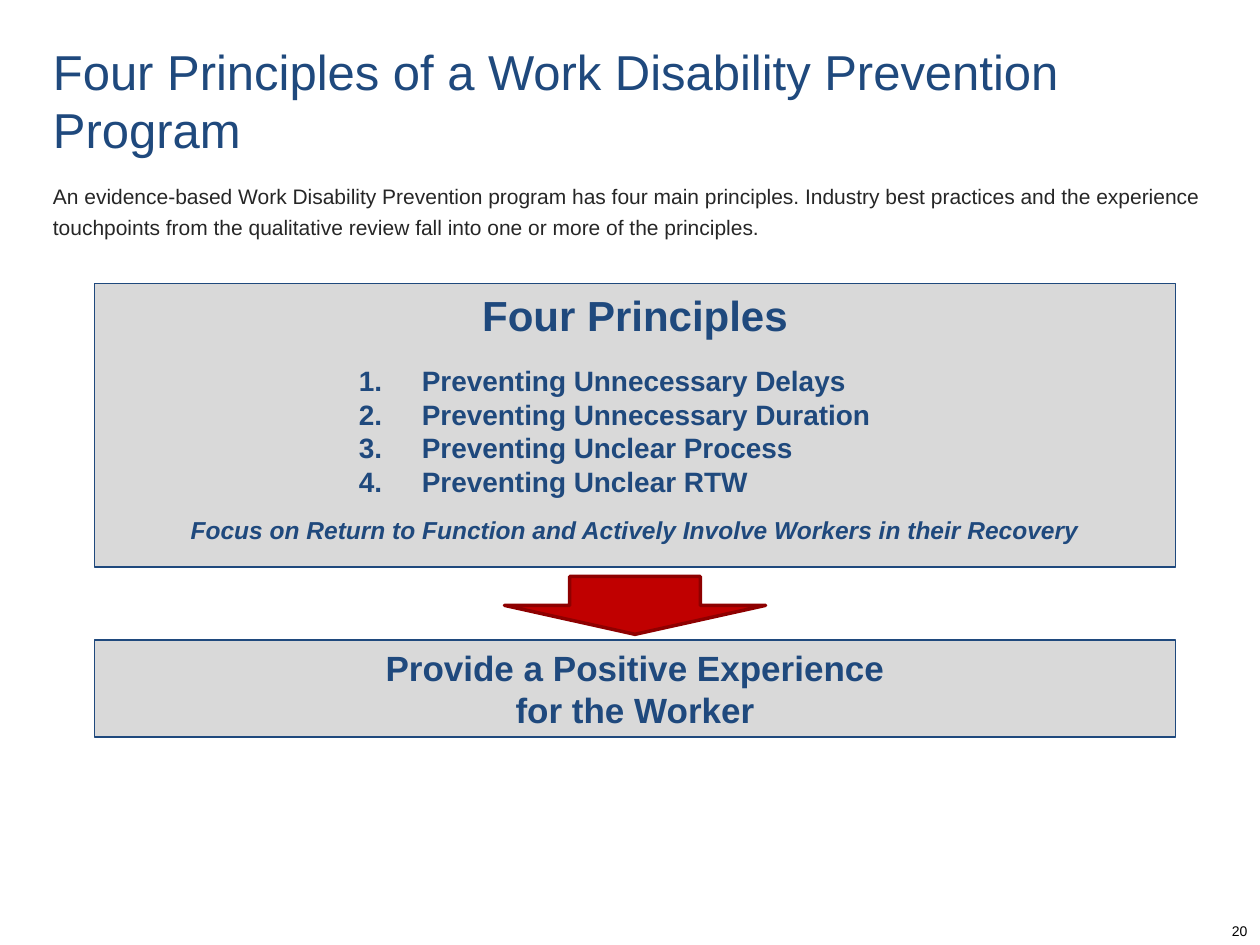
import dataclasses

import lxml.etree
import pptx
import pptx.dml.color
import pptx.enum.shapes
import pptx.enum.text
import pptx.oxml.ns
import pptx.shapes.autoshape
import pptx.slide
import pptx.text.text
import pptx.util

Pt = pptx.util.Pt
Align = pptx.enum.text.PP_ALIGN
Anchor = pptx.enum.text.MSO_ANCHOR
Preset = pptx.enum.shapes.MSO_SHAPE


@dataclasses.dataclass(frozen=True)
class Theme:
    font: str = "Arial"
    navy: str = "1F497D"
    body: str = "262626"
    black: str = "000000"
    panel: str = "D9D9D9"
    red: str = "C00000"
    dark_red: str = "8E0000"
    title_size: float = 28
    heading_size: float = 24
    outcome_size: float = 20
    list_size: float = 16
    focus_size: float = 14
    body_size: float = 12
    number_size: float = 8


@dataclasses.dataclass(frozen=True)
class Area:
    left: float
    top: float
    width: float
    height: float

    def lengths(self) -> list[pptx.util.Length]:
        return [Pt(value) for value in dataclasses.astuple(self)]


@dataclasses.dataclass(frozen=True)
class Line:
    text: str
    size: float
    color: str
    align: Align = Align.LEFT
    bold: bool = False
    italic: bool = False
    numbered: bool = False
    before: float = 0
    after: float = 0
    spacing: float = 1.0


THEME = Theme()
LIST_INDENT, NUMBER_HANG = 180, 36

TITLE = Area(30.25, 6.5, 660, 84.25)
INTRO = Area(30.25, 102.25, 666, 48.25)
PRINCIPLES = Area(54, 162, 617.75, 162)
ARROW = Area(288.25, 329.4, 149.25, 33.1)
OUTCOME = Area(54, 365.75, 617.75, 55.5)
PAGE_NUMBER = Area(552.25, 523.5, 167.75, 16.5)


def color_of(code: str) -> pptx.dml.color.RGBColor:
    return pptx.dml.color.RGBColor.from_string(code)


def number_paragraph(para: pptx.text.text._Paragraph) -> None:
    """Give the paragraph a hanging automatic number."""
    properties = para._p.get_or_add_pPr()
    properties.set("marL", str(int(Pt(LIST_INDENT))))
    properties.set("indent", str(int(Pt(-NUMBER_HANG))))
    number = lxml.etree.SubElement(properties, pptx.oxml.ns.qn("a:buAutoNum"))
    number.set("type", "arabicPeriod")


def write_lines(frame: pptx.text.text.TextFrame, lines: list[Line],
                anchor: Anchor = Anchor.TOP, inset: bool = True) -> None:
    frame.word_wrap = True
    frame.auto_size = pptx.enum.text.MSO_AUTO_SIZE.NONE
    frame.vertical_anchor = anchor
    frame.margin_left = frame.margin_right = Pt(7.2 if inset else 0)
    frame.margin_top = frame.margin_bottom = Pt(3.6 if inset else 0)
    for index, line in enumerate(lines):
        para = frame.add_paragraph() if index else frame.paragraphs[0]
        para.alignment = line.align
        para.line_spacing = line.spacing
        para.space_before, para.space_after = Pt(line.before), Pt(line.after)
        if line.numbered:
            number_paragraph(para)
        span = para.add_run()
        span.text = line.text
        span.font.name = THEME.font
        span.font.size = Pt(line.size)
        span.font.bold, span.font.italic = line.bold, line.italic
        span.font.color.rgb = color_of(line.color)


def add_text(page: pptx.slide.Slide, area: Area, line: Line, inset: bool) -> None:
    box = page.shapes.add_textbox(*area.lengths())
    write_lines(box.text_frame, [line], inset=inset)


def add_filled(page: pptx.slide.Slide, preset: Preset, area: Area, fill: str,
               outline: str, weight: float) -> pptx.shapes.autoshape.Shape:
    shape = page.shapes.add_shape(preset, *area.lengths())
    shape.shadow.inherit = False
    shape.fill.solid()
    shape.fill.fore_color.rgb = color_of(fill)
    shape.line.color.rgb = color_of(outline)
    shape.line.width = Pt(weight)
    return shape


def add_panel(page: pptx.slide.Slide, area: Area, lines: list[Line]) -> None:
    panel = add_filled(page, Preset.RECTANGLE, area, THEME.panel, THEME.navy, 0.75)
    write_lines(panel.text_frame, lines)


def main() -> None:
    deck = pptx.Presentation()
    deck.slide_width, deck.slide_height = Pt(720), Pt(540)
    page = deck.slides.add_slide(deck.slide_layouts.get_by_name("Title Only"))

    # Title and introduction
    title = page.shapes.title
    title.left, title.top, title.width, title.height = TITLE.lengths()
    write_lines(title.text_frame, [
        Line("Four Principles of a Work Disability Prevention Program",
             THEME.title_size, THEME.navy),
    ], Anchor.BOTTOM, inset=False)
    add_text(page, INTRO, Line(
        "An evidence-based Work Disability Prevention program has four main "
        "principles. Industry best practices and the experience touchpoints from "
        "the qualitative review fall into one or more of the principles.",
        THEME.body_size, THEME.body, spacing=1.2), inset=False)

    # The four principles
    principles = ["Preventing Unnecessary Delays", "Preventing Unnecessary Duration",
                  "Preventing Unclear Process", "Preventing Unclear RTW"]
    add_panel(page, PRINCIPLES, [
        Line("Four Principles", THEME.heading_size, THEME.navy, Align.CENTER,
             bold=True, after=13.5),
        *[Line(text, THEME.list_size, THEME.navy, bold=True, numbered=True)
          for text in principles],
        Line("Focus on Return to Function and Actively Involve Workers in their Recovery",
             THEME.focus_size, THEME.navy, Align.CENTER, bold=True, italic=True,
             before=9.5),
    ])

    # Arrow to the outcome
    arrow = add_filled(page, Preset.DOWN_ARROW, ARROW, THEME.red, THEME.dark_red, 2)
    lxml.etree.SubElement(arrow.line._get_or_add_ln(), pptx.oxml.ns.qn("a:round"))
    add_panel(page, OUTCOME, [
        Line(text, THEME.outcome_size, THEME.navy, Align.CENTER, bold=True)
        for text in ("Provide a Positive Experience", "for the Worker")
    ])

    # Page number
    add_text(page, PAGE_NUMBER,
             Line("20", THEME.number_size, THEME.black, Align.RIGHT), inset=True)

    deck.save("out.pptx")


if __name__ == "__main__":
    main()
